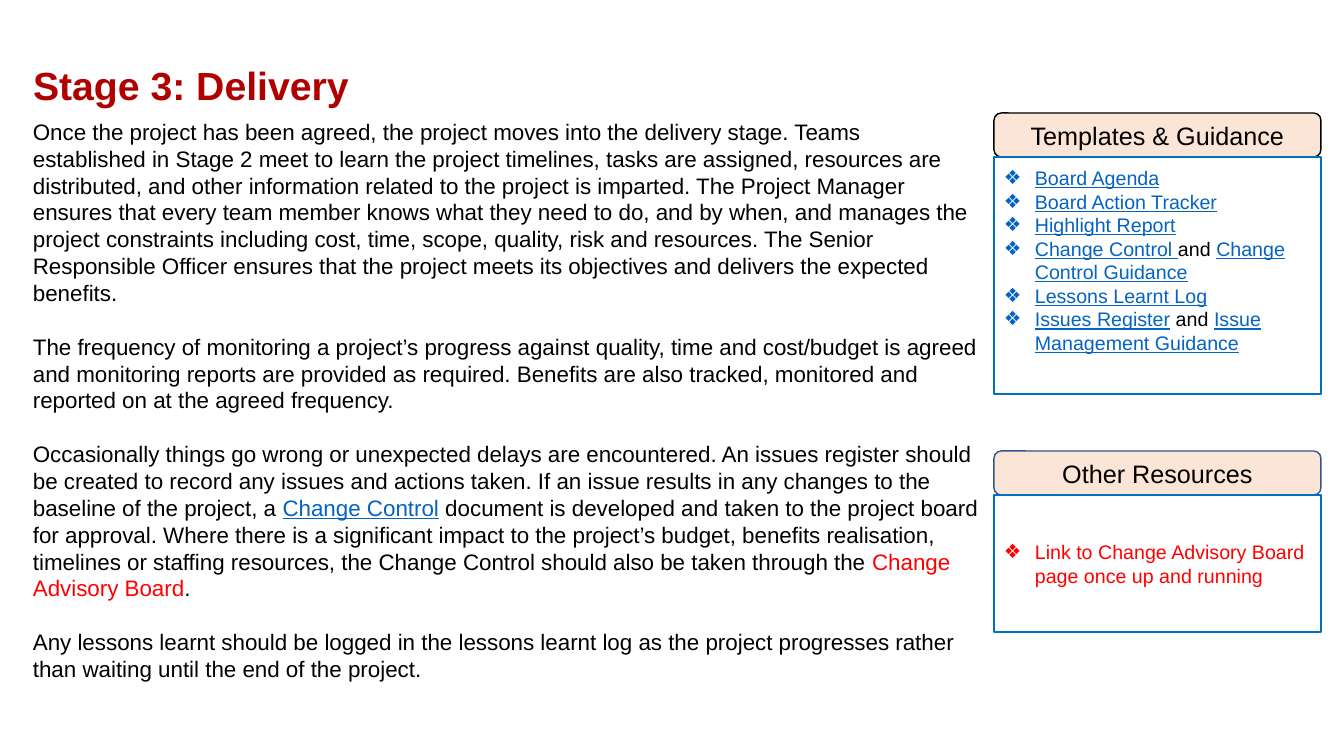
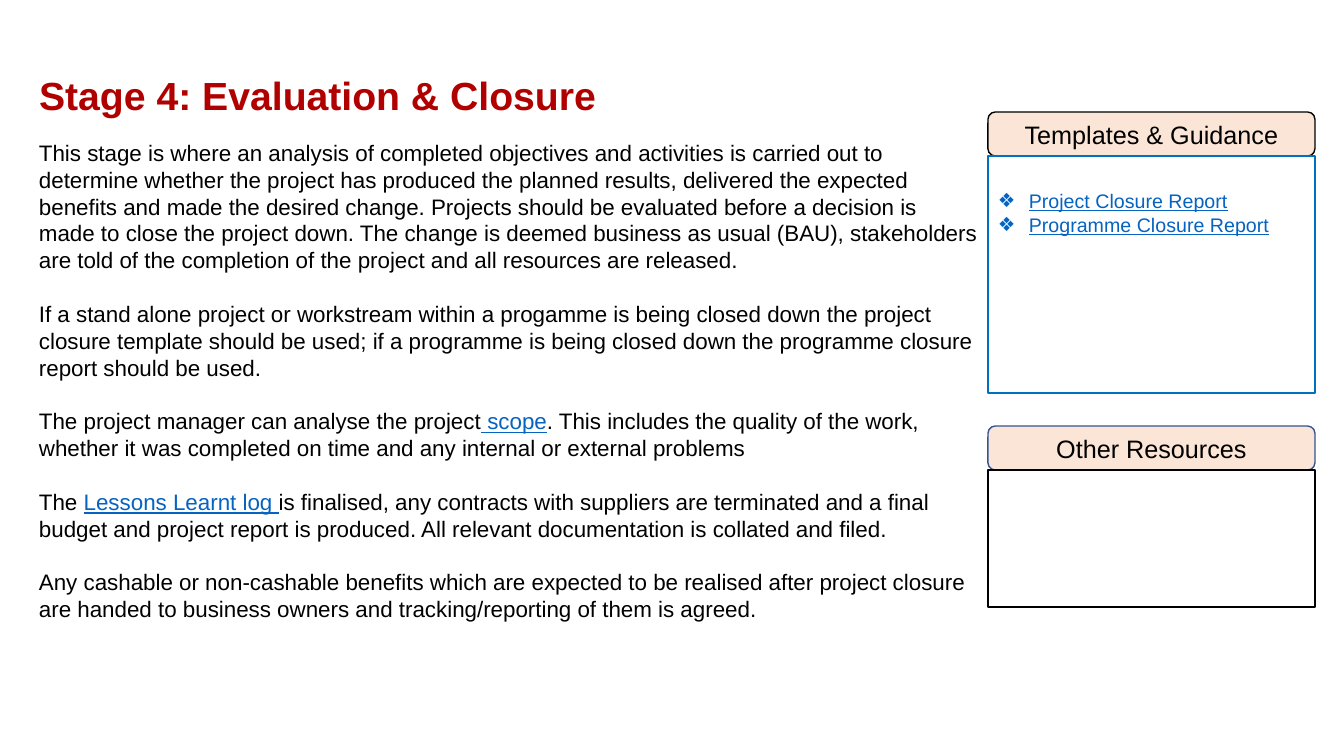
import pptx
import pptx.util
import pptx.dml.color
import pptx.enum.shapes
import pptx.enum.text
import pptx.oxml
import pptx.oxml.ns

RGB = pptx.dml.color.RGBColor
SHAPE = pptx.enum.shapes.MSO_SHAPE
ANCHOR = pptx.enum.text.MSO_ANCHOR
ALIGN = pptx.enum.text.PP_ALIGN
AUTO = pptx.enum.text.MSO_AUTO_SIZE

BLACK = RGB(0x00, 0x00, 0x00)
WHITE = RGB(0xFF, 0xFF, 0xFF)
TITLE_RED = RGB(0xB0, 0x00, 0x00)
TODO_RED = RGB(0xFF, 0x00, 0x00)
LINK_BLUE = RGB(0x05, 0x63, 0xC1)
BORDER_BLUE = RGB(0x00, 0x70, 0xC0)
HEADER_BLUE = RGB(0x32, 0x54, 0x91)
PEACH = RGB(0xFB, 0xE5, 0xD6)

FONT = "Arial"
SCALE = 914400 / 100.8
SLIDE_W, SLIDE_H = 1344, 756
PANEL_W, HEADER_H = 327, 44
TITLE_H = 71
INDENT = 31
BODY_PT, LIST_PT = 16, 14
PARA_GAP_PT = 19.15


def link(text):
    return text, LINK_BLUE


def todo(text):
    return text, TODO_RED


# A paragraph is a list of pieces: plain strings, links and red to-do items.
# A panel is heading, top, height of its box, heading line, box line,
# space above its list (None centres the list), list items.
SLIDES = [
    {
        "title": "Stage 3: Delivery",
        "title_at": (23, 42, 354),
        "body_at": (23, 113, 971, 607),
        "panel_left": 994,
        "body": [
            ["Once the project has been agreed, the project moves into the delivery stage. Teams",
             "\v",
             "established in Stage 2 meet to learn the project timelines, tasks are assigned, "
             "resources are distributed, and other information related to the project is imparted. "
             "The Project Manager ensures that every team member knows what they need to do, and by "
             "when, and manages the project constraints including cost, time, scope, quality, risk "
             "and resources. The Senior Responsible Officer ensures that the project meets its "
             "objectives and delivers the expected benefits."],
            ["The frequency of monitoring a project’s progress against quality, time and cost/budget "
             "is agreed and monitoring reports are provided as required. Benefits are also tracked, "
             "monitored and reported on at the agreed frequency."],
            ["Occasionally things go wrong or unexpected delays are encountered. An issues register "
             "should be created to record any issues and actions taken. If an issue results in any "
             "changes to the baseline of the project, a ",
             link("Change Control"),
             " document is developed and taken to the project board for approval. Where there is a "
             "significant impact to the project’s budget, benefits realisation, timelines or staffing "
             "resources, the Change Control should also be taken through the ",
             todo("Change Advisory Board"), "."],
            ["Any lessons learnt should be logged in the lessons learnt log as the project progresses "
             "rather than waiting until the end of the project."],
        ],
        "panels": [
            ("Templates & Guidance", 113, 237, BLACK, BORDER_BLUE, 9, [
                [link("Board Agenda")],
                [link("Board Action Tracker")],
                [link("Highlight Report")],
                [link("Change Control "), "and ", link("Change Control Guidance")],
                [link("Lessons Learnt Log")],
                [link("Issues Register"), " and ", link("Issue Management Guidance")],
            ]),
            ("Other Resources", 451, 137, HEADER_BLUE, BORDER_BLUE, None, [
                [todo("Link to Change Advisory Board page once up and running")],
            ]),
        ],
    },
    {
        "title": "Stage 4: Evaluation & Closure",
        "title_at": (29, 52, 615),
        "body_at": (29, 134, 959, 526),
        "panel_left": 988,
        "body": [
            ["This stage is where an analysis of completed objectives and activities is carried out to "
             "determine whether the project has produced the planned results, delivered the expected "
             "benefits and made the desired change. Projects should be evaluated before a decision is "
             "made to close the project down. The change is deemed business as usual (BAU), "
             "stakeholders are told of the completion of the project and all resources are released."],
            ["If a stand alone project or workstream within a progamme is being closed down the project "
             "closure template should be used; if a programme is being closed down the programme "
             "closure report should be used."],
            ["The project manager can analyse the project", link(" scope"),
             ". This includes the quality of the work, whether it was completed on time and any "
             "internal or external problems"],
            ["The ", link("Lessons Learnt log "),
             "is finalised, any contracts with suppliers are terminated and a final budget and project "
             "report is produced. All relevant documentation is collated and filed."],
            ["Any cashable or non-cashable benefits which are expected to be realised after project "
             "closure are handed to business owners and tracking/reporting of them is agreed."],
        ],
        "panels": [
            ("Templates & Guidance", 112, 237, BLACK, BORDER_BLUE, 33, [
                [link("Project Closure Report")],
                [link("Programme Closure Report")],
            ]),
            ("Other Resources", 426, 137, HEADER_BLUE, BLACK, None, []),
        ],
    },
]


def px(n):
    return pptx.util.Emu(round(n * SCALE))


def style_run(r, size, color, bold=False):
    r.font.name = FONT
    r.font.size = pptx.util.Pt(size)
    r.font.color.rgb = color
    r.font.bold = bold


def add_bullet(p):
    ppr = p._p.get_or_add_pPr()
    ppr.set("marL", str(px(INDENT)))
    ppr.set("indent", str(-px(INDENT)))
    ppr.append(pptx.oxml.parse_xml(
        f'<a:buFont {pptx.oxml.ns.nsdecls("a")} typeface="{FONT}"/>'))
    ppr.append(pptx.oxml.parse_xml(
        f'<a:buChar {pptx.oxml.ns.nsdecls("a")} char="❖"/>'))


def fill_text(tf, paragraphs, size, gap=0, bullets=False):
    tf.word_wrap = True
    for i, pieces in enumerate(paragraphs):
        p = tf.add_paragraph() if i else tf.paragraphs[0]
        p.alignment = ALIGN.LEFT
        if i and gap:
            p.space_before = pptx.util.Pt(gap)
        if bullets:
            add_bullet(p)
        for piece in pieces:
            if piece == "\v":
                p.add_line_break()
                continue
            text, color = (piece, BLACK) if isinstance(piece, str) else piece
            r = p.add_run()
            r.text = text
            style_run(r, size, color)
            if color == LINK_BLUE:
                r.font.underline = True


def add_box(s, kind, left, top, height, fill, line):
    sp = s.shapes.add_shape(kind, px(left), px(top), px(PANEL_W), px(height))
    sp.shadow.inherit = False
    sp.fill.solid()
    sp.fill.fore_color.rgb = fill
    sp.line.color.rgb = line
    sp.line.width = pptx.util.Pt(1)
    sp.text_frame.vertical_anchor = ANCHOR.MIDDLE
    return sp


def add_panel(s, left, heading, top, height, header_line, box_line, pad, items):
    header = add_box(s, SHAPE.ROUNDED_RECTANGLE, left, top, HEADER_H, PEACH, header_line)
    p = header.text_frame.paragraphs[0]
    p.text = heading
    p.alignment = ALIGN.CENTER
    style_run(p.runs[0], 18, BLACK)

    box = add_box(s, SHAPE.RECTANGLE, left, top + HEADER_H, height, WHITE, box_line)
    tf = box.text_frame
    if pad is not None:
        tf.vertical_anchor = ANCHOR.TOP
        tf.margin_top = px(pad)
    fill_text(tf, items, LIST_PT, bullets=True)


def set_title(s, text, left, top, width):
    sp = s.shapes.title
    sp.left, sp.top, sp.width, sp.height = px(left), px(top), px(width), px(TITLE_H)
    tf = sp.text_frame
    tf.text = text
    tf.word_wrap = True
    tf.auto_size = AUTO.NONE
    tf.vertical_anchor = ANCHOR.BOTTOM
    p = tf.paragraphs[0]
    p.alignment = ALIGN.LEFT
    style_run(p.runs[0], 28, TITLE_RED, bold=True)


def add_stage(prs, stage):
    s = prs.slides.add_slide(prs.slide_layouts[5])
    set_title(s, stage["title"], *stage["title_at"])
    for panel in stage["panels"]:
        add_panel(s, stage["panel_left"], *panel)
    body = s.shapes.add_textbox(*map(px, stage["body_at"]))
    fill_text(body.text_frame, stage["body"], BODY_PT, gap=PARA_GAP_PT)


def main():
    prs = pptx.Presentation()
    prs.slide_width, prs.slide_height = px(SLIDE_W), px(SLIDE_H)
    for stage in SLIDES:
        add_stage(prs, stage)
    prs.save("out.pptx")


if __name__ == "__main__":
    main()
